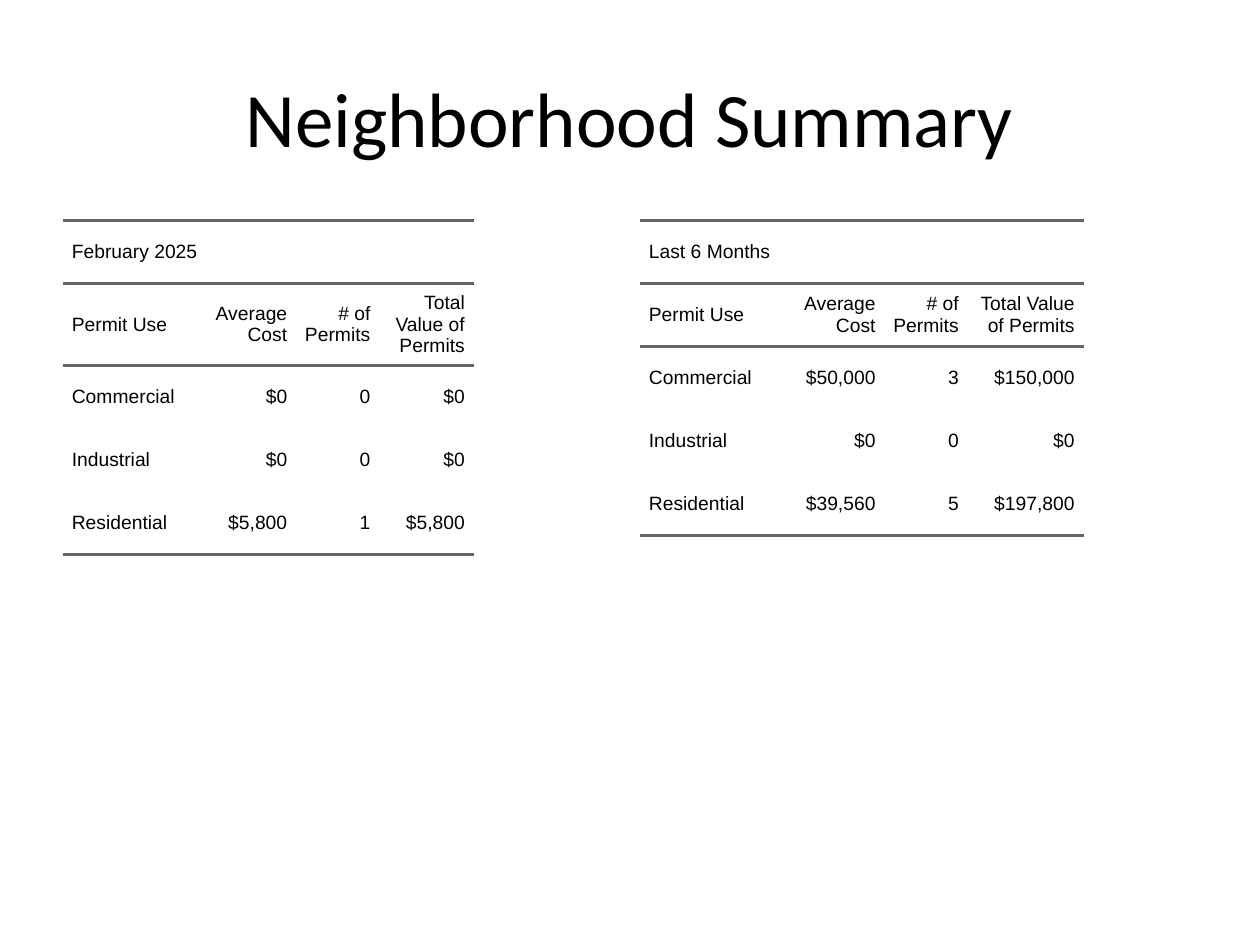
"""Build the Neighborhood Summary slide with two permit tables."""
from dataclasses import dataclass

from lxml.etree import SubElement
from pptx import Presentation
from pptx.dml.color import RGBColor
from pptx.enum.text import MSO_ANCHOR as Anchor, PP_ALIGN as Align
from pptx.oxml.ns import qn
from pptx.util import Inches, Pt

TITLE = "Neighborhood Summary"
HEADINGS = ["Permit Use", "Average Cost", "# of Permits", "Total Value of Permits"]
TABLES = [
    {
        "period": "February 2025",
        "left": 0.5,
        "widths": [1.1, 0.75, 0.66, 0.75],
        "rows": [
            ["Commercial", "$0", "0", "$0"],
            ["Industrial", "$0", "0", "$0"],
            ["Residential", "$5,800", "1", "$5,800"],
        ],
    },
    {
        "period": "Last 6 Months",
        "left": 5.08,
        "widths": [1.1, 0.84, 0.66, 0.92],
        "rows": [
            ["Commercial", "$50,000", "3", "$150,000"],
            ["Industrial", "$0", "0", "$0"],
            ["Residential", "$39,560", "5", "$197,800"],
        ],
    },
]
TABLE_TOP, TABLE_WIDTH, TABLE_HEIGHT = 1.75, 4.42, 4.95
ROW_HEIGHT = 0.5
PADDING = Inches(0.07)
NO_GRID_STYLE = "{2D5ABB26-0587-4C30-8999-92F81FD0307C}"


@dataclass(frozen=True)
class Theme:
    text: str = "000000"
    rule: str = "666666"
    title_font: str = "Calibri"
    table_font: str = "Arial"
    title_size: int = 44
    table_size: int = 11
    rule_width: float = 1.5
    spacing: int = 5


THEME = Theme()


def write_text(frame, text, *, font, size, align, color=THEME.text):
    frame.word_wrap = True
    para = frame.paragraphs[0]
    para.alignment = align
    span = para.add_run()
    span.text = text
    span.font.name = font
    span.font.size = Pt(size)
    span.font.color.rgb = RGBColor.from_string(color)
    return para


def draw_rules(cell, sides):
    properties = cell._tc.get_or_add_tcPr()
    for index, side in enumerate(sides):
        line = SubElement(properties, qn(f"a:ln{side}"), w=str(Pt(THEME.rule_width)))
        fill = SubElement(line, qn("a:solidFill"))
        SubElement(fill, qn("a:srgbClr"), val=THEME.rule)
        properties.insert(index, line)


def fill_cell(cell, text, align):
    cell.margin_left = cell.margin_right = 0
    cell.margin_top = cell.margin_bottom = PADDING
    cell.vertical_anchor = Anchor.MIDDLE
    para = write_text(cell.text_frame, text, font=THEME.table_font,
                      size=THEME.table_size, align=align)
    para.space_before = para.space_after = Pt(THEME.spacing)
    for side in ("marL", "marR"):
        para._p.get_or_add_pPr().set(side, str(PADDING))


def add_permit_table(page, period, left, widths, rows):
    grid = [[period], HEADINGS, *rows]
    frame = page.shapes.add_table(len(grid), len(widths), Inches(left), Inches(TABLE_TOP),
                                  Inches(TABLE_WIDTH), Inches(TABLE_HEIGHT))
    table = frame.table
    table.first_row = table.horz_banding = False
    table._tbl.tblPr.find(qn("a:tableStyleId")).text = NO_GRID_STYLE
    for column, width in zip(table.columns, widths):
        column.width = Inches(width)
    for row in table.rows:
        row.height = Inches(ROW_HEIGHT)
    frame.width, frame.height = Inches(TABLE_WIDTH), Inches(TABLE_HEIGHT)
    table.cell(0, 0).merge(table.cell(0, len(widths) - 1))

    rules = {0: "TB", 1: "TB", len(grid) - 1: "B"}
    for row_index, row in enumerate(table.rows):
        for cell in row.cells:
            cell.fill.background()
            draw_rules(cell, rules.get(row_index, ""))
        for column_index, text in enumerate(grid[row_index]):
            align = Align.RIGHT if column_index else Align.LEFT
            fill_cell(row.cells[column_index], text, align)


def main():
    deck = Presentation()
    deck.slide_width, deck.slide_height = Inches(10), Inches(7.5)
    page = deck.slides.add_slide(deck.slide_layouts[5])
    title = page.shapes.title
    title.left, title.top = Inches(0.5), Inches(0.3)
    title.width, title.height = Inches(9), Inches(1.25)
    title.text_frame.vertical_anchor = Anchor.MIDDLE
    write_text(title.text_frame, TITLE, font=THEME.title_font,
               size=THEME.title_size, align=Align.CENTER)
    for content in TABLES:
        add_permit_table(page, **content)
    deck.save("out.pptx")


if __name__ == "__main__":
    main()
